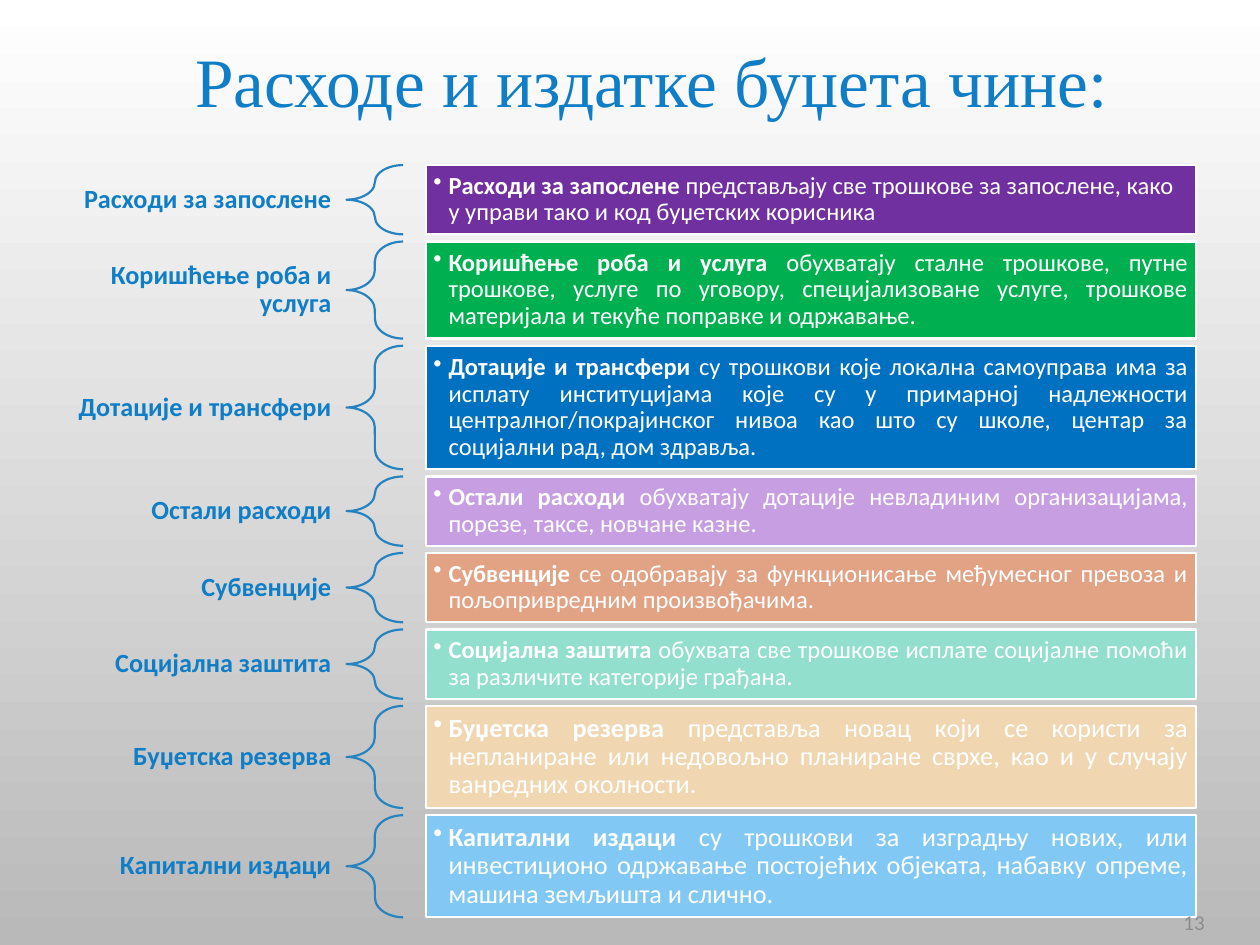
from dataclasses import dataclass

from lxml.etree import SubElement
from pptx import Presentation
from pptx.dml.color import RGBColor
from pptx.enum.shapes import MSO_SHAPE
from pptx.enum.text import MSO_ANCHOR, MSO_AUTO_SIZE, PP_ALIGN
from pptx.oxml.ns import qn
from pptx.util import Inches, Pt

WHITE = RGBColor(0xFF, 0xFF, 0xFF)
BACKGROUND_END = RGBColor(0xB9, 0xB9, 0xB9)
HEADING_BLUE = RGBColor(0x10, 0x7E, 0xC6)
BRACE_BLUE = RGBColor(0x26, 0x83, 0xBF)
NUMBER_GRAY = RGBColor(0x8C, 0x8C, 0x8C)
PURPLE = RGBColor(0x70, 0x30, 0xA0)
GREEN = RGBColor(0x00, 0xB0, 0x50)
BLUE = RGBColor(0x00, 0x70, 0xC0)
LILAC = RGBColor(0xC8, 0x9E, 0xE3)
SALMON = RGBColor(0xE2, 0xA3, 0x85)
MINT = RGBColor(0x93, 0xDF, 0xCE)
SAND = RGBColor(0xF0, 0xD7, 0xB2)
SKY = RGBColor(0x82, 0xC8, 0xF5)


@dataclass
class Expense:
    name: str
    description: str
    color: RGBColor
    height: float
    label_height: float = 0.32
    size: int = 14
    align: PP_ALIGN = PP_ALIGN.JUSTIFY


EXPENSES = [
    Expense("Расходи за запослене",
            "представљају све трошкове за запослене, како у управи тако и код "
            "буџетских корисника", PURPLE, 0.55, align=PP_ALIGN.LEFT),
    Expense("Коришћење роба и услуга",
            "обухватају сталне трошкове, путне трошкове, услуге по уговору, "
            "специјализоване услуге, трошкове материјала и текуће поправке и "
            "одржавање.", GREEN, 0.77, label_height=0.55),
    Expense("Дотације и трансфери",
            "су трошкови које локална самоуправа има за исплату институцијама "
            "које су у примарној надлежности централног/покрајинског нивоа као "
            "што су школе, центар за социјални рад, дом здравља.",
            BLUE, 0.98, label_height=0.55),
    Expense("Остали расходи",
            "обухватају дотације невладиним организацијама, порезе, таксе, "
            "новчане казне.", LILAC, 0.55),
    Expense("Субвенције",
            "сe одобравају за функционисање међумесног превоза и "
            "пољопривредним произвођачима.", SALMON, 0.55),
    Expense("Социјална заштита",
            "обухвата све трошкове исплате социјалне помоћи за различите "
            "категорије грађана.", MINT, 0.55),
    Expense("Буџетска резерва",
            "представља новац који се користи за непланиране или недовољно "
            "планиране сврхе, као и у случају ванредних околности.",
            SAND, 0.81, size=15),
    Expense("Капитални издаци",
            "су трошкови за изградњу нових, или инвестиционо одржавање "
            "постојећих објеката, набавку опреме, машина земљишта и слично.",
            SKY, 0.81, size=15),
]


def set_font(paragraph, size, color, name="Calibri"):
    paragraph.font.name = name
    paragraph.font.size = Pt(size)
    paragraph.font.color.rgb = color


def set_frame(frame, margin_x, margin_y):
    frame.word_wrap = True
    frame.vertical_anchor = MSO_ANCHOR.MIDDLE
    frame.margin_left = frame.margin_right = Inches(margin_x)
    frame.margin_top = frame.margin_bottom = Inches(margin_y)


def add_bullet(paragraph, indent):
    properties = paragraph._p.get_or_add_pPr()
    properties.set("marL", str(Inches(indent)))
    properties.set("indent", str(-Inches(indent)))
    SubElement(properties, qn("a:buChar")).set("char", "•")


def fill_background(slide):
    fill = slide.background.fill
    fill.gradient()
    fill.gradient_angle = 270
    for stop, color in zip(fill.gradient_stops, (WHITE, BACKGROUND_END)):
        stop.color.rgb = color


def place_heading(slide, left, top, width, height):
    heading = slide.shapes.title
    heading.left, heading.top = Inches(left), Inches(top)
    heading.width, heading.height = Inches(width), Inches(height)
    heading.text_frame.text = "Расходе и издатке буџета чине:"
    heading.text_frame.auto_size = MSO_AUTO_SIZE.NONE
    set_frame(heading.text_frame, 0.1, 0.05)
    paragraph = heading.text_frame.paragraphs[0]
    paragraph.alignment = PP_ALIGN.CENTER
    set_font(paragraph, 39.6, HEADING_BLUE, "Times New Roman")


def add_expense_row(slide, expense, left, top, width):
    label_width, brace_width, brace_gap = 2.25, 0.45, 0.18
    brace_left = left + label_width
    panel_left = brace_left + brace_width + brace_gap

    # Name, centred vertically on the row
    label = slide.shapes.add_textbox(
        Inches(left), Inches(top + (expense.height - expense.label_height) / 2),
        Inches(label_width), Inches(expense.label_height))
    set_frame(label.text_frame, 0.12, 0.04)
    paragraph = label.text_frame.paragraphs[0]
    paragraph.text = expense.name
    paragraph.alignment = PP_ALIGN.RIGHT
    paragraph.line_spacing = 0.9
    set_font(paragraph, 15, HEADING_BLUE)
    paragraph.font.bold = True

    # Brace
    brace = slide.shapes.add_shape(
        MSO_SHAPE.LEFT_BRACE, Inches(brace_left), Inches(top),
        Inches(brace_width), Inches(expense.height))
    brace.adjustments[0], brace.adjustments[1] = 0.35, 0.5
    brace.fill.background()
    brace.line.color.rgb = BRACE_BLUE

    # Coloured panel with the description
    panel = slide.shapes.add_shape(
        MSO_SHAPE.RECTANGLE, Inches(panel_left), Inches(top),
        Inches(left + width - panel_left), Inches(expense.height))
    panel.fill.solid()
    panel.fill.fore_color.rgb = expense.color
    panel.line.color.rgb = WHITE
    for outlined in (brace, panel):
        outlined.line.width = Pt(1.25)
        outlined.shadow.inherit = False
    set_frame(panel.text_frame, 0.06, 0.06)
    paragraph = panel.text_frame.paragraphs[0]
    paragraph.alignment = expense.align
    paragraph.line_spacing = 0.9
    add_bullet(paragraph, 0.12)
    set_font(paragraph, expense.size, WHITE)
    term = paragraph.add_run()
    term.text = expense.name + " "
    term.font.bold = True
    paragraph.add_run().text = expense.description


def add_expense_list(slide, left, top, width, height):
    free_height = height - sum(expense.height for expense in EXPENSES)
    gap = free_height / (len(EXPENSES) - 1)
    for expense in EXPENSES:
        add_expense_row(slide, expense, left, top, width)
        top += expense.height + gap


def add_page_number(slide, left, top, width, height):
    number = slide.shapes.add_textbox(
        Inches(left), Inches(top), Inches(width), Inches(height))
    set_frame(number.text_frame, 0.1, 0.05)
    paragraph = number.text_frame.paragraphs[0]
    paragraph.text = "13"
    paragraph.alignment = PP_ALIGN.RIGHT
    set_font(paragraph, 12, NUMBER_GRAY)


def main():
    presentation = Presentation()
    presentation.slide_width, presentation.slide_height = Inches(10), Inches(7.5)
    slide = presentation.slides.add_slide(presentation.slide_layouts[5])
    fill_background(slide)
    place_heading(slide, 0.67, 0.29, 9, 0.68)
    add_expense_list(slide, 0.5, 1.31, 8.99, 5.97)
    add_page_number(slide, 7.33, 7.12, 2.33, 0.4)
    presentation.save("out.pptx")


if __name__ == "__main__":
    main()
